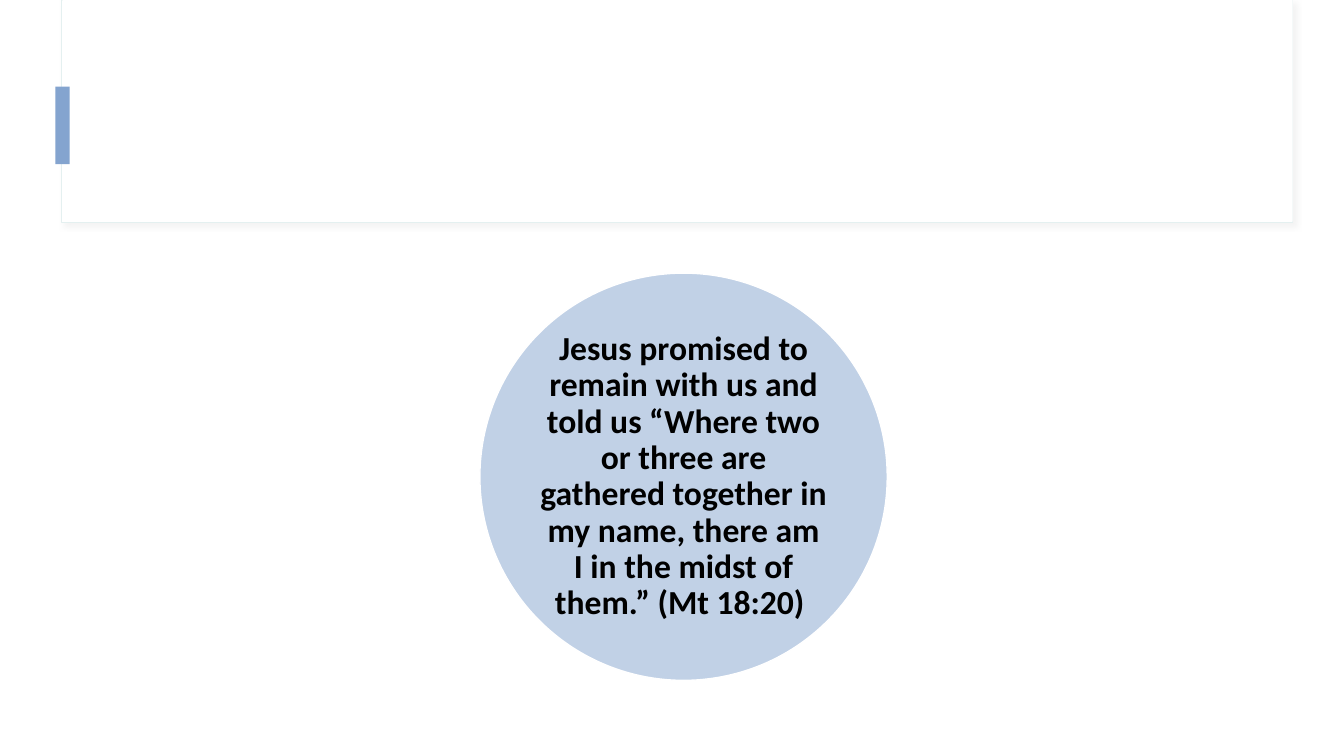
from dataclasses import dataclass

from lxml import etree
from pptx import Presentation
from pptx.dml.color import RGBColor
from pptx.enum import shapes, text
from pptx.oxml import ns
from pptx.util import Inches, Pt


@dataclass(frozen=True)
class Theme:
    paper: str = "FFFFFF"
    edge: str = "E4F0F0"
    shade: str = "D9D9D9"
    blue: str = "84A4CF"
    ink: str = "000000"
    font: str = "Calibri"
    size: int = 24


THEME = Theme()
QUOTE = (
    "Jesus promised to remain with us and told us “Where two or three are "
    "gathered together in my name, there am I in the midst of them.” (Mt 18:20) "
)


def add_node(parent, tag, **attrs):
    return etree.SubElement(parent, ns.qn(tag), attrs)


def add_form(slide, kind, box, fill, line=None, width=1):
    form = slide.shapes.add_shape(kind, *map(Inches, box))
    form.shadow.inherit = False
    form.fill.solid()
    form.fill.fore_color.rgb = RGBColor.from_string(fill)
    if line:
        form.line.color.rgb = RGBColor.from_string(line)
        form.line.width = Pt(width)
    else:
        form.line.fill.background()
    return form


def cast_shade(form):
    effects = form._element.spPr.find(ns.qn("a:effectLst"))
    shade = add_node(effects, "a:outerShdw", blurRad=str(Pt(4)),
                     dist=str(Pt(3)), dir=str(45 * 60000), algn="tl", rotWithShape="0")
    color = add_node(shade, "a:srgbClr", val=THEME.shade)
    add_node(color, "a:alpha", val="30000")


def add_header(slide, box):
    left, top, width, height = box
    rect = shapes.MSO_SHAPE.RECTANGLE
    frame = add_form(slide, rect, box, THEME.paper, THEME.edge, 0.75)
    cast_shade(frame)
    add_form(slide, rect, (left + 0.01, top, width - 0.01, height - 0.01), THEME.paper)
    add_form(slide, rect, (left - 0.06, top + 0.86, 0.14, 0.77), THEME.blue)


def add_quote(slide, box):
    left, top, side, _ = box
    disc = add_form(slide, shapes.MSO_SHAPE.OVAL, box, THEME.blue, THEME.paper)
    color = disc._element.spPr.find(ns.qn("a:solidFill"))[0]
    add_node(color, "a:alpha", val="50000")

    inset = 0.59
    room = side - 2 * inset
    label = slide.shapes.add_textbox(
        *map(Inches, (left + inset, top + inset, room, room)))
    frame = label.text_frame
    frame.word_wrap = True
    frame.vertical_anchor = text.MSO_ANCHOR.MIDDLE
    frame.margin_left = frame.margin_right = 0
    frame.margin_top = frame.margin_bottom = 0
    para = frame.paragraphs[0]
    para.text = QUOTE
    para.alignment = text.PP_ALIGN.CENTER
    para.line_spacing = 0.9
    para.font.name = THEME.font
    para.font.size = Pt(THEME.size)
    para.font.bold = True
    para.font.color.rgb = RGBColor.from_string(THEME.ink)


def main():
    deck = Presentation()
    deck.slide_width = Inches(13.33)
    deck.slide_height = Inches(7.5)
    slide = deck.slides.add_slide(deck.slide_layouts[6])
    slide.background.fill.solid()
    slide.background.fill.fore_color.rgb = RGBColor.from_string(THEME.paper)
    add_header(slide, (0.61, 0, 12.21, 2.21))
    add_quote(slide, (4.76, 2.71, 4.04, 4.04))
    deck.save("out.pptx")


if __name__ == "__main__":
    main()
